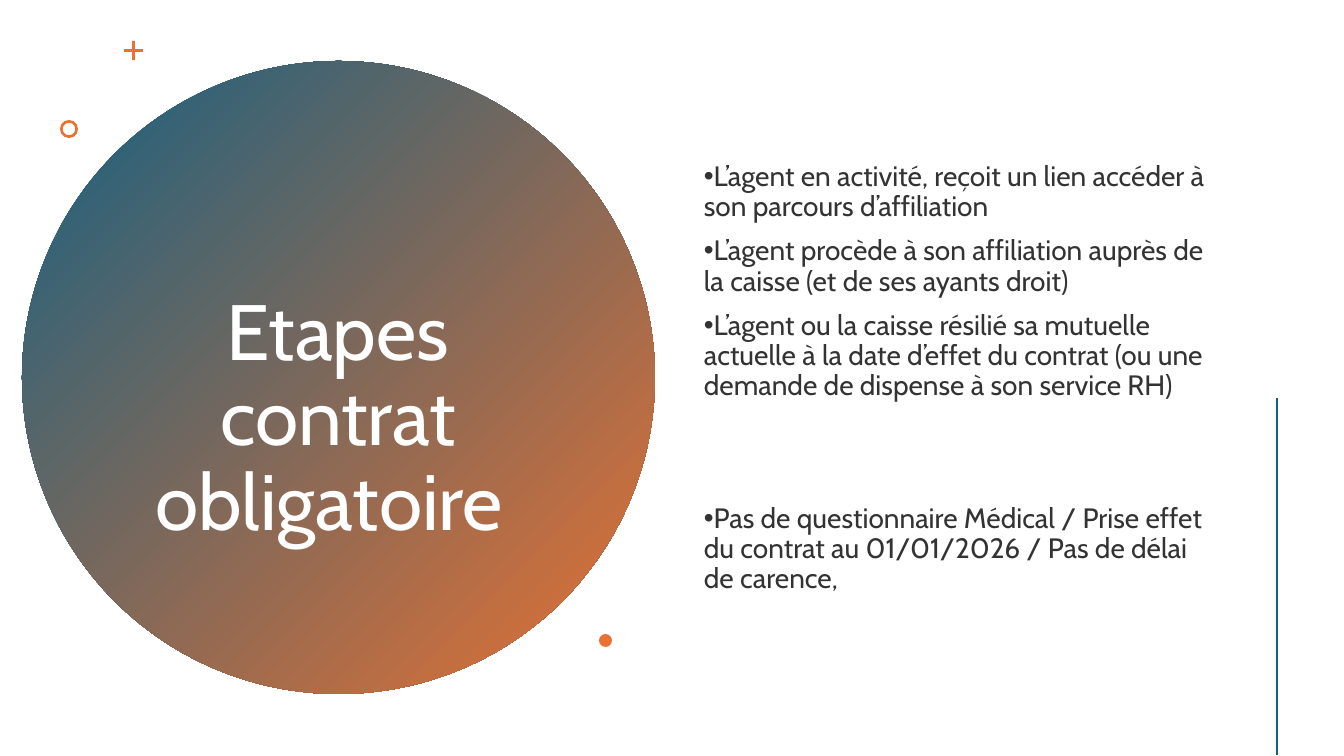
from lxml import etree
from pptx import Presentation
from pptx.dml.color import RGBColor
from pptx.enum.shapes import MSO_CONNECTOR, MSO_SHAPE
from pptx.enum.text import MSO_ANCHOR, PP_ALIGN
from pptx.oxml.ns import qn
from pptx.util import Emu, Pt

OVAL, DONUT, CROSS = MSO_SHAPE.OVAL, MSO_SHAPE.DONUT, MSO_SHAPE.CROSS
STRAIGHT = MSO_CONNECTOR.STRAIGHT
MIDDLE = MSO_ANCHOR.MIDDLE
CENTER, LEFT = PP_ALIGN.CENTER, PP_ALIGN.LEFT

BLUE = RGBColor(0x15, 0x60, 0x82)
ORANGE = RGBColor(0xE9, 0x71, 0x32)
WHITE = RGBColor(0xFF, 0xFF, 0xFF)
BLACK = RGBColor(0x00, 0x00, 0x00)

EMU_PER_PX = 914400 / 100.8
FONT_NAME = "Cabin"
TITLE = "Etapes contrat obligatoire "
STEPS = [
    ("L’agent en activité, reçoit un lien accéder à son parcours d’affiliation", 10),
    ("L’agent procède à son affiliation auprès de la caisse (et de ses ayants droit)", 10),
    ("L’agent ou la caisse résilié sa mutuelle actuelle à la date d’effet du contrat "
     "(ou une demande de dispense à son service RH)", 10),
    ("Pas de questionnaire Médical / Prise effet du contrat au 01/01/2026 / "
     "Pas de délai de carence,", 73),
]
ACCENTS = [
    (CROSS, (124, 41, 19, 19), 0.43),
    (DONUT, (60, 120, 18, 18), 0.15),
    (OVAL, (599, 634, 13, 13), None),
]


def px(value):
    return Emu(round(value * EMU_PER_PX))


def apply_format(target, values):
    for name, value in values.items():
        setattr(target, name, value)


def add_plain_shape(slide, kind, box):
    shape = slide.shapes.add_shape(kind, *map(px, box))
    shape.shadow.inherit = False
    shape.line.fill.background()
    return shape


def add_gradient_circle(slide, box):
    circle = add_plain_shape(slide, OVAL, box)
    circle.fill.gradient()
    circle.fill.gradient_angle = 315
    for stop, color in zip(circle.fill.gradient_stops, (BLUE, ORANGE)):
        stop.color.rgb = color


def add_accent(slide, kind, box, adjustment):
    accent = add_plain_shape(slide, kind, box)
    accent.fill.solid()
    accent.fill.fore_color.rgb = ORANGE
    if adjustment is not None:
        accent.adjustments[0] = adjustment


def add_text_frame(slide, box):
    frame = slide.shapes.add_textbox(*map(px, box)).text_frame
    apply_format(frame, {"word_wrap": True, "vertical_anchor": MIDDLE})
    return frame


def write_paragraph(paragraph, text, size, color, values):
    apply_format(paragraph, {"line_spacing": 0.9, **values})
    run = paragraph.add_run()
    run.text = text
    apply_format(run.font, {"name": FONT_NAME, "size": Pt(size)})
    run.font.color.rgb = color
    return run


def add_title(slide, box):
    paragraph = add_text_frame(slide, box).paragraphs[0]
    write_paragraph(paragraph, TITLE, 56, WHITE, {"alignment": CENTER})


def add_bullet(paragraph):
    properties = paragraph._p.get_or_add_pPr()
    properties.set("marL", "0")
    properties.set("indent", "-228600")
    etree.SubElement(properties, qn("a:buFont")).set("typeface", "Arial")
    etree.SubElement(properties, qn("a:buChar")).set("char", "•")


def set_opacity(run, percent):
    color = run._r.find(".//" + qn("a:srgbClr"))
    etree.SubElement(color, qn("a:alpha")).set("val", str(percent * 1000))


def add_steps(slide, box):
    frame = add_text_frame(slide, box)
    for index, (text, space) in enumerate(STEPS):
        paragraph = frame.add_paragraph() if index else frame.paragraphs[0]
        values = {"alignment": LEFT, "space_before": Pt(space)}
        run = write_paragraph(paragraph, text, 20, BLACK, values)
        set_opacity(run, 80)
        add_bullet(paragraph)


def add_rule(slide, ends):
    rule = slide.shapes.add_connector(STRAIGHT, *map(px, ends))
    rule.line.color.rgb = BLUE
    rule.line.width = Pt(2)
    etree.SubElement(rule._element.spPr, qn("a:effectLst"))


def main():
    presentation = Presentation()
    apply_format(presentation, {"slide_width": px(1344), "slide_height": px(756)})
    slide = presentation.slides.add_slide(presentation.slide_layouts[6])
    add_gradient_circle(slide, (22, 61, 633, 633))
    add_title(slide, (137, 227, 402, 386))
    for kind, box, adjustment in ACCENTS:
        add_accent(slide, kind, box, adjustment)
    add_steps(slide, (694, 57, 526, 643))
    add_rule(slide, (1277, 398, 1277, 755))
    presentation.save("out.pptx")


if __name__ == "__main__":
    main()
